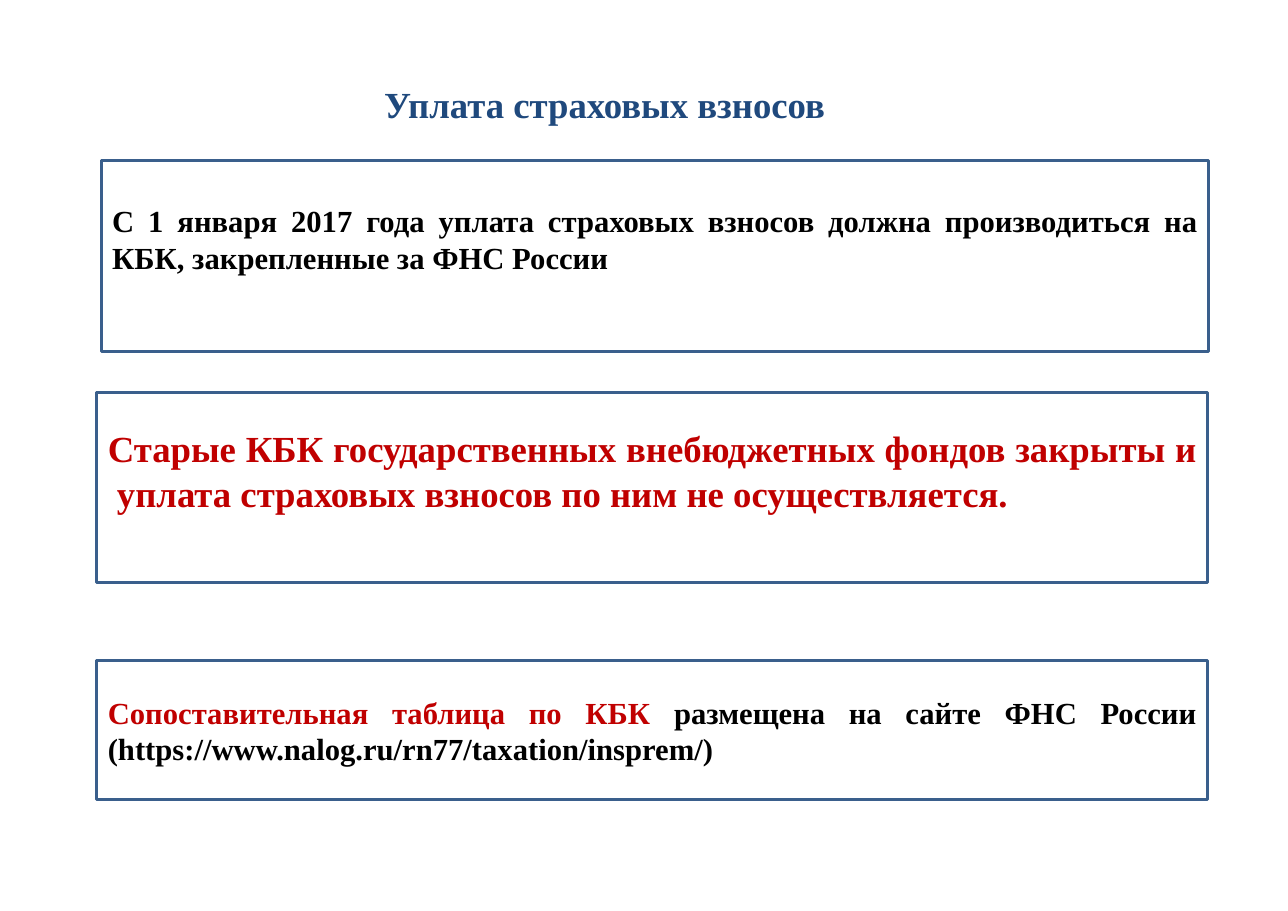
from pptx import Presentation
from pptx.dml.color import RGBColor
from pptx.enum import shapes, text
from pptx.util import Inches, Pt

FONT = "Times New Roman"
COLORS = {"title": "1F497D", "border": "3A5F8C", "red": "C00000", "black": "000000"}


def color(name):
    return RGBColor.from_string(COLORS[name])


def format_paragraph(p, size, align):
    p.alignment = align
    p.font.name = FONT
    p.font.size = Pt(size)
    p.font.bold = True


def add_title(s, title):
    sp = s.shapes.title
    sp.left, sp.top = Inches(1.91), Inches(0.28)
    sp.width, sp.height = Inches(7.24), Inches(1.33)
    tf = sp.text_frame
    tf.text = title
    tf.vertical_anchor = text.MSO_ANCHOR.MIDDLE
    p = tf.paragraphs[0]
    format_paragraph(p, 24, text.PP_ALIGN.CENTER)
    p.font.color.rgb = color("title")


def add_box(s, left, top, width, height, size, runs, bottom=0.05):
    """Add an outlined box; runs is a list of (wording, colour name)."""
    sp = s.shapes.add_shape(shapes.MSO_SHAPE.RECTANGLE, Inches(left), Inches(top),
                            Inches(width), Inches(height))
    sp.shadow.inherit = False
    sp.fill.background()
    sp.line.color.rgb = color("border")
    sp.line.width = Pt(2)
    tf = sp.text_frame
    tf.word_wrap = True
    tf.vertical_anchor = text.MSO_ANCHOR.MIDDLE
    tf.margin_bottom = Inches(bottom)
    p = tf.paragraphs[0]
    format_paragraph(p, size, text.PP_ALIGN.JUSTIFY)
    for wording, name in runs:
        r = p.add_run()
        r.text = wording
        r.font.color.rgb = color(name)


def main():
    prs = Presentation()
    prs.slide_width, prs.slide_height = Inches(11.69), Inches(8.27)
    s = prs.slides.add_slide(prs.slide_layouts[5])

    add_title(s, "Уплата страховых взносов ")

    # New payment codes
    add_box(s, 0.92, 1.46, 10.05, 1.73, 20, [
        ("С 1 января 2017 года уплата страховых взносов должна производиться "
         "на КБК, закрепленные за ФНС России", "black")], bottom=0.36)

    # Closed payment codes; a no-break space indents the second line
    add_box(s, 0.88, 3.56, 10.08, 1.73, 24, [
        ("Старые КБК государственных внебюджетных фондов закрыты и "
         " уплата страховых взносов по ним не осуществляется.", "red")], bottom=0.36)

    # Where to find the comparison table
    add_box(s, 0.88, 6, 10.08, 1.26, 20, [
        ("Сопоставительная таблица по КБК ", "red"),
        ("размещена на сайте ФНС России "
         "(https://www.nalog.ru/rn77/taxation/insprem/)", "black")])

    prs.save("out.pptx")


if __name__ == "__main__":
    main()
